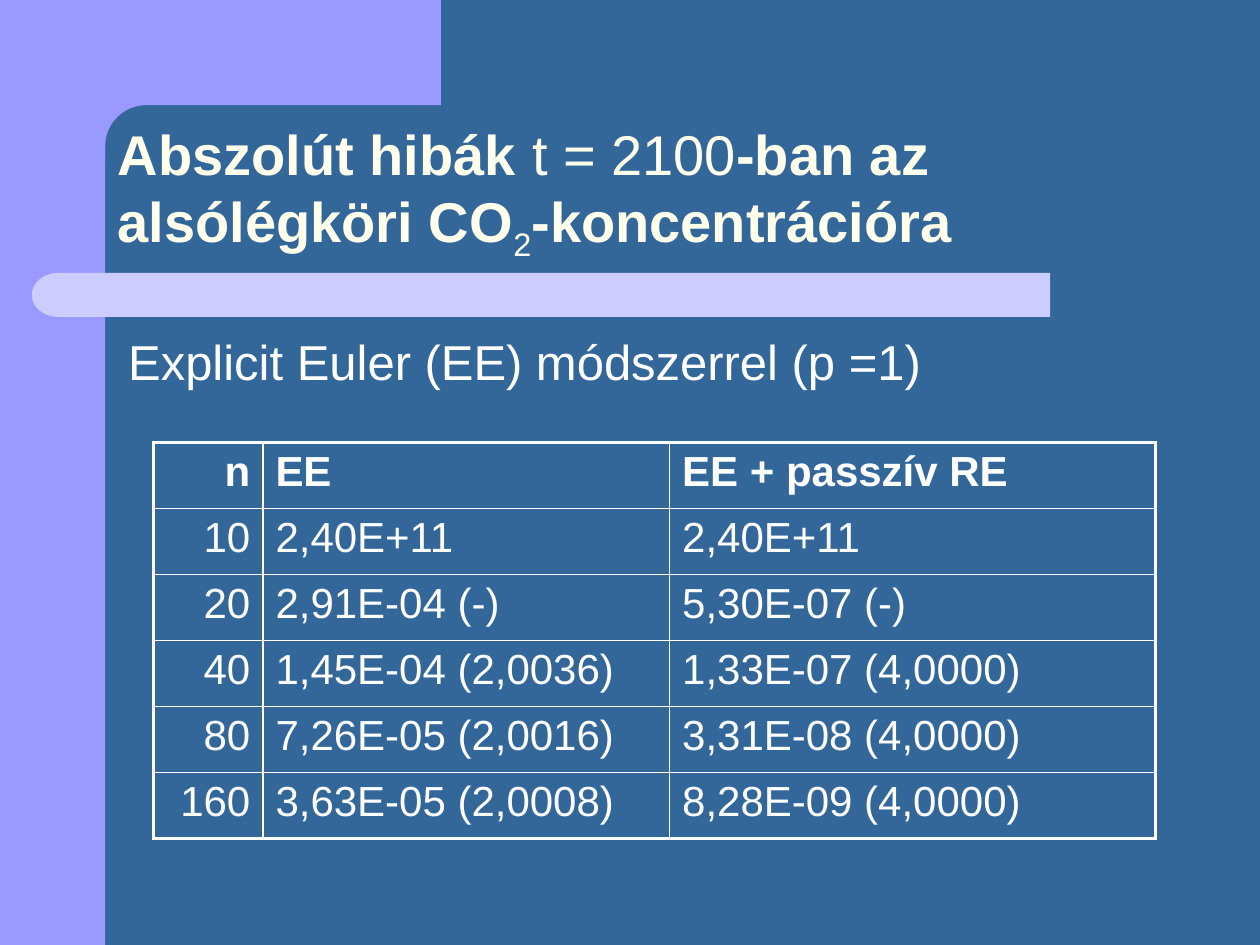
"""Build a slide with a title, one line of text and a table of absolute errors."""
from dataclasses import dataclass
from math import cos, pi, sin

from lxml.etree import SubElement
from pptx import Presentation
from pptx.dml.color import RGBColor
from pptx.enum.shapes import MSO_SHAPE as Shape
from pptx.enum.text import MSO_ANCHOR as Anchor, MSO_AUTO_SIZE as AutoSize, PP_ALIGN as Align
from pptx.oxml.ns import qn
from pptx.util import Cm, Pt

LILAC, PALE, CREAM, WHITE, BLUE = "9999FF", "CCCCFF", "FFFFEB", "FFFFFF", "336699"
THIN, THICK = 1, 2.25


@dataclass
class Band:
    kind: Shape
    x: float
    y: float
    w: float
    h: float
    color: str
    rotation: int = 0


@dataclass
class TitleRun:
    text: str
    bold: bool = True
    baseline: int = 0


BANDS = [
    Band(Shape.RECTANGLE, 0, 0, 2.12, 19.05, LILAC),
    Band(Shape.RECTANGLE, 1.69, 5.5, 19.48, 0.89, PALE),
    Band(Shape.FLOWCHART_DELAY, 0.64, 5.5, 1.08, 0.89, PALE, 180),
]
TITLE = [
    TitleRun("Abszolút hibák "),
    TitleRun("t = 2100", bold=False),
    TitleRun("-ban az alsólégköri CO"),
    TitleRun("2", bold=False, baseline=-25000),
    TitleRun("-koncentrációra"),
]
ROWS = [
    ("n", "EE", "EE + passzív RE"),
    ("10", "2,40E+11", "2,40E+11"),
    ("20", "2,91E-04 (-)", "5,30E-07 (-)"),
    ("40", "1,45E-04 (2,0036)", "1,33E-07 (4,0000)"),
    ("80", "7,26E-05 (2,0016)", "3,31E-08 (4,0000)"),
    ("160", "3,63E-05 (2,0008)", "8,28E-09 (4,0000)"),
]
COL_WIDTHS = [2.2, 8.2, 9.8]
ROW_HEIGHT = 1.33


def paint(fill, color: str) -> None:
    fill.solid()
    fill.fore_color.rgb = RGBColor.from_string(color)


def finish(sp, color: str) -> None:
    sp.shadow.inherit = False
    paint(sp.fill, color)
    sp.line.fill.background()


def write(p, text: str, *, size: float, color: str = WHITE, bold: bool = False,
          baseline: int = 0) -> None:
    r = p.add_run()
    r.text = text
    r.font.name, r.font.size, r.font.bold = "Arial", Pt(size), bold
    r.font.color.rgb = RGBColor.from_string(color)
    if baseline:
        r._r.get_or_add_rPr().set("baseline", str(baseline))


def add_band(s, band: Band) -> None:
    sp = s.shapes.add_shape(band.kind, Cm(band.x), Cm(band.y), Cm(band.w), Cm(band.h))
    sp.rotation = band.rotation
    finish(sp, band.color)


def add_corner(s) -> None:
    center, radius, steps = 2.95, 0.83, 12
    angles = [pi / 2 * i / steps for i in range(steps + 1)]
    arc = [(center - radius * sin(a), center - radius * cos(a)) for a in angles]
    outline = [(8.89, 2.12), *arc, (2.12, 3.25), (1.27, 3.25), (1.27, 0)]
    builder = s.shapes.build_freeform(Cm(8.89), 0)
    builder.add_line_segments([(Cm(x), Cm(y)) for x, y in outline])
    finish(builder.convert_to_shape(), LILAC)


def place(s, sp, x: float, y: float, w: float, h: float, anchor: Anchor):
    s.shapes._spTree.append(sp._element)
    sp.left, sp.top, sp.width, sp.height = Cm(x), Cm(y), Cm(w), Cm(h)
    tf = sp.text_frame
    tf.word_wrap, tf.auto_size, tf.vertical_anchor = True, AutoSize.NONE, anchor
    p = tf.paragraphs[0]
    p.alignment = Align.LEFT
    return p


def add_border(cell, side: str, width: float) -> None:
    ln = SubElement(cell._tc.get_or_add_tcPr(), qn(f"a:ln{side}"), w=str(Pt(width)))
    SubElement(SubElement(ln, qn("a:solidFill")), qn("a:srgbClr"), val=WHITE)


def add_table(s, x: float, y: float) -> None:
    last_row, last_col = len(ROWS) - 1, len(COL_WIDTHS) - 1
    table = s.shapes.add_table(len(ROWS), len(COL_WIDTHS), Cm(x), Cm(y),
                               Cm(sum(COL_WIDTHS)), Cm(ROW_HEIGHT * len(ROWS))).table
    table.horz_banding = False
    for column, width in zip(table.columns, COL_WIDTHS):
        column.width = Cm(width)
    for i, texts in enumerate(ROWS):
        table.rows[i].height = Cm(ROW_HEIGHT)
        for j, text in enumerate(texts):
            cell = table.cell(i, j)
            edges = {"L": j == 0, "R": j == last_col, "T": i == 0, "B": i == last_row}
            for side, outer in edges.items():
                add_border(cell, side, THICK if outer else THIN)
            cell.fill.background()
            p = cell.text_frame.paragraphs[0]
            p.alignment = Align.RIGHT if j == 0 else Align.LEFT
            p.space_before = Pt(1)
            write(p, text, size=24, bold=i == 0)


def main() -> None:
    prs = Presentation()
    prs.slide_width, prs.slide_height = Cm(25.4), Cm(19.05)
    s = prs.slides.add_slide(prs.slide_layouts[1])
    paint(s.background.fill, BLUE)
    add_corner(s)
    for band in BANDS:
        add_band(s, band)

    p = place(s, s.shapes.title, 2.12, 2.12, 22.01, 3.17, Anchor.BOTTOM)
    p.line_spacing = 0.9
    for run in TITLE:
        write(p, run.text, size=32, color=CREAM, bold=run.bold, baseline=run.baseline)

    p = place(s, s.placeholders[1], 2.33, 6.56, 21.36, 10.46, Anchor.TOP)
    SubElement(p._p.get_or_add_pPr(), qn("a:buNone"))
    write(p, "Explicit Euler (EE) módszerrel (p =1)", size=28)

    add_table(s, 3.1, 8.92)
    prs.save("out.pptx")


if __name__ == "__main__":
    main()
